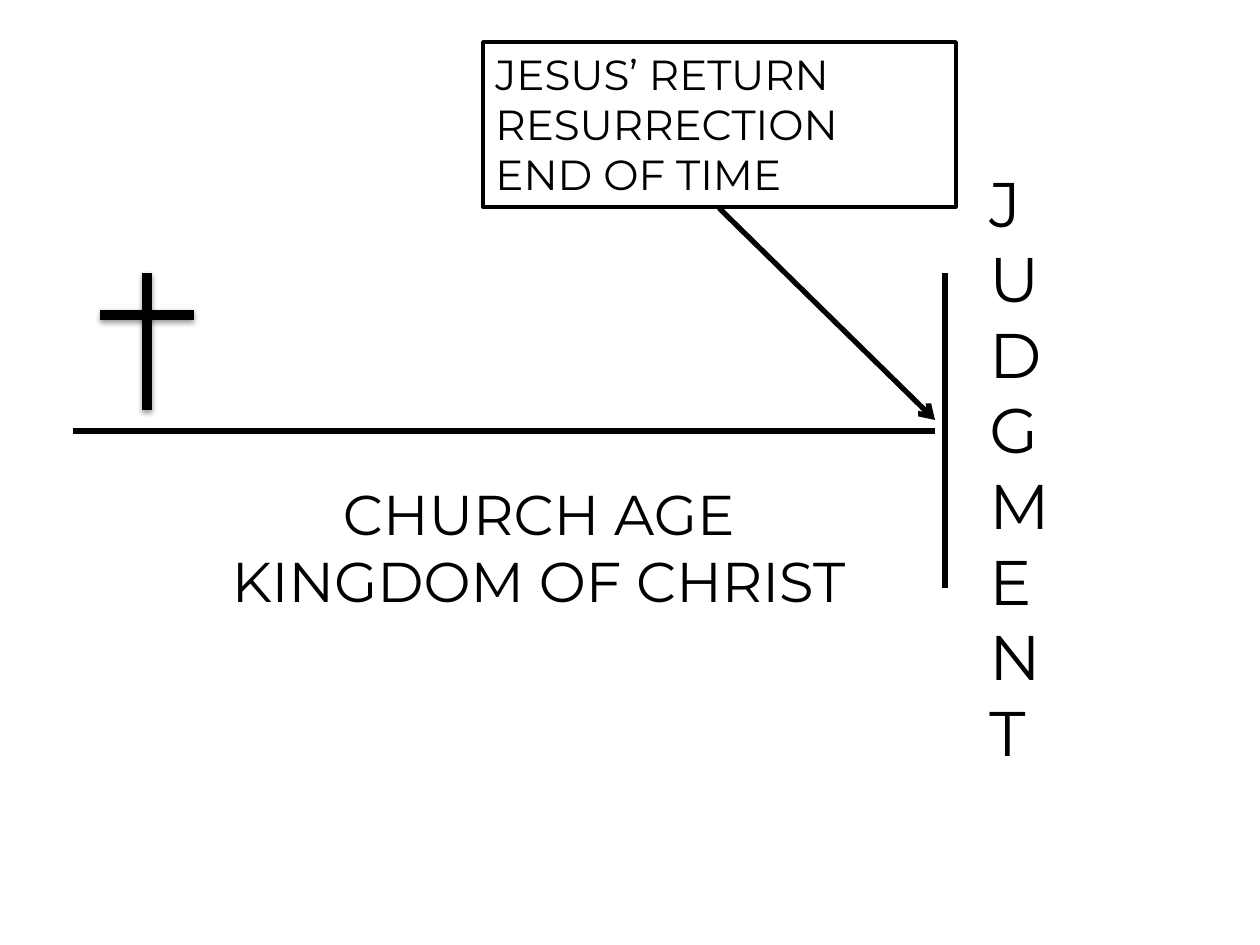
import pptx
import pptx.util
import pptx.dml.color
import pptx.enum.shapes
import pptx.enum.text
import pptx.oxml.ns
from lxml import etree

SCALE = 914400 / 126
COLORS = {"ink": "000000", "paper": "FFFFFF"}
FONT = "Montserrat"
ALIGN = pptx.enum.text.PP_ALIGN
qn = pptx.oxml.ns.qn


def px(n):
    return pptx.util.Emu(round(n * SCALE))


def color(name):
    return pptx.dml.color.RGBColor.from_string(COLORS[name])


def add_shadow(effects):
    shadow = etree.SubElement(effects, qn("a:outerShdw"), blurRad="40000",
                              dist="20000", dir="5400000", rotWithShape="0")
    ink = etree.SubElement(shadow, qn("a:srgbClr"), val=COLORS["ink"])
    etree.SubElement(ink, qn("a:alpha"), val="38000")


def add_line(s, x1, y1, x2, y2, width=3, arrow=False, shadow=False):
    line = s.shapes.add_connector(pptx.enum.shapes.MSO_CONNECTOR.STRAIGHT,
                                  px(x1), px(y1), px(x2), px(y2))
    line.line.color.rgb = color("ink")
    line.line.width = pptx.util.Pt(width)
    if arrow:
        etree.SubElement(line.line._get_or_add_ln(), qn("a:tailEnd"), type="arrow")
    effects = etree.SubElement(line._element.spPr, qn("a:effectLst"))
    if shadow:
        add_shadow(effects)


def write_text(sp, lines, size, align=ALIGN.LEFT):
    tf = sp.text_frame
    tf.word_wrap = True
    tf.auto_size = pptx.enum.text.MSO_AUTO_SIZE.SHAPE_TO_FIT_TEXT
    tf.vertical_anchor = pptx.enum.text.MSO_ANCHOR.TOP
    for i, text in enumerate(lines):
        p = tf.add_paragraph() if i else tf.paragraphs[0]
        p.alignment = align
        r = p.add_run()
        r.text = text
        r.font.name = FONT
        r.font.size = pptx.util.Pt(size)
        r.font.color.rgb = color("ink")


def add_text(s, x, y, w, h, lines, **fmt):
    sp = s.shapes.add_textbox(px(x), px(y), px(w), px(h))
    write_text(sp, lines, **fmt)


def add_box(s, x, y, w, h, lines, **fmt):
    sp = s.shapes.add_shape(pptx.enum.shapes.MSO_SHAPE.RECTANGLE,
                            px(x), px(y), px(w), px(h))
    sp.shadow.inherit = False
    sp.fill.solid()
    sp.fill.fore_color.rgb = color("paper")
    sp.line.color.rgb = color("ink")
    sp.line.width = pptx.util.Pt(2)
    write_text(sp, lines, **fmt)


def add_cross(s):
    add_line(s, 147, 273, 147, 410, width=6, shadow=True)
    add_line(s, 100, 315, 194, 315, width=6, shadow=True)


def main():
    prs = pptx.Presentation()
    prs.slide_width, prs.slide_height = px(1260), px(945)
    s = prs.slides.add_slide(prs.slide_layouts[6])
    add_cross(s)
    add_line(s, 73, 431, 935, 431)
    add_line(s, 945, 273, 945, 588)
    add_text(s, 166, 473, 746, 149, ["CHURCH AGE", "KINGDOM OF CHRIST"],
             size=32, align=ALIGN.CENTER)
    add_text(s, 977, 158, 84, 624, "JUDGMENT", size=36)
    add_line(s, 719, 208, 935, 420, arrow=True)
    add_box(s, 483, 42, 473, 165,
            ["JESUS’ RETURN", "RESURRECTION", "END OF TIME"], size=24)
    prs.save("out.pptx")


if __name__ == "__main__":
    main()
